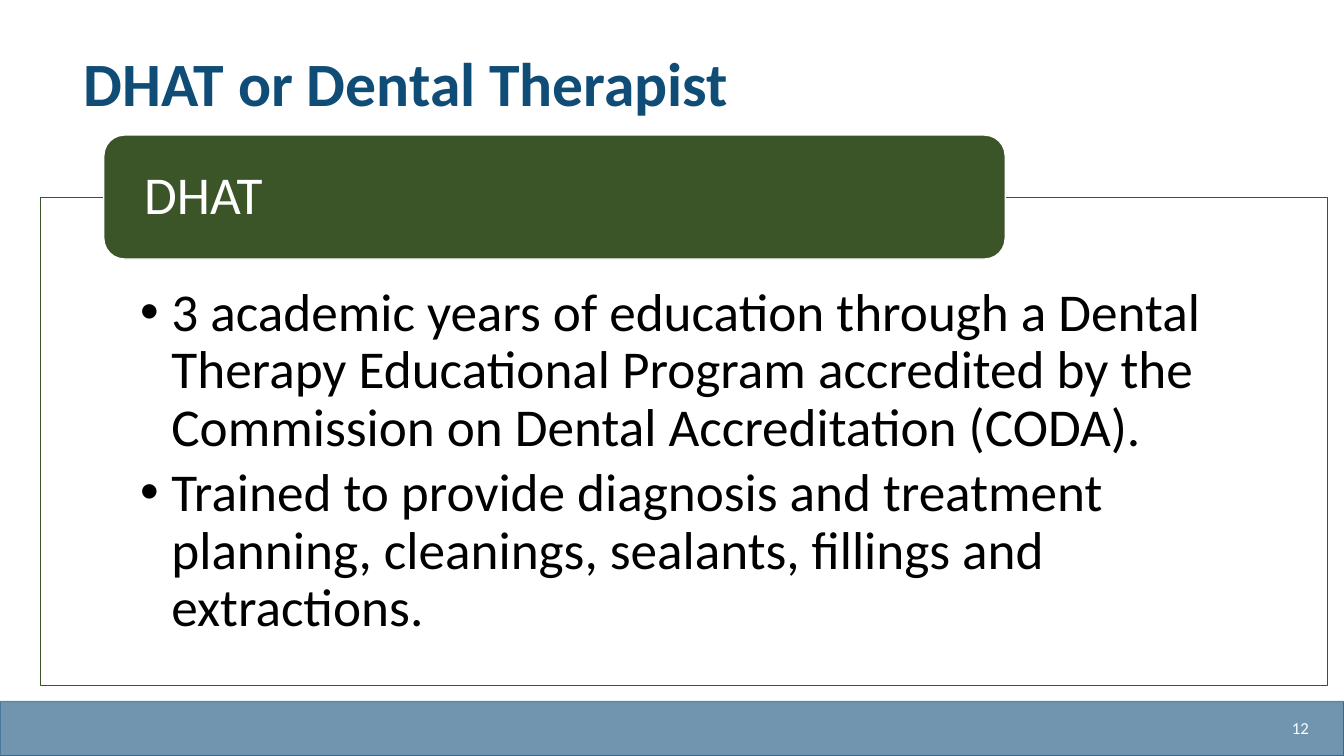
import pptx
import pptx.dml.color
import pptx.enum.shapes
import pptx.enum.text
import pptx.oxml
import pptx.oxml.ns
import pptx.util
from lxml import etree

Inches = pptx.util.Inches
Pt = pptx.util.Pt
RGBColor = pptx.dml.color.RGBColor
Shape = pptx.enum.shapes.MSO_SHAPE
Align = pptx.enum.text.PP_ALIGN
Anchor = pptx.enum.text.MSO_ANCHOR
qn = pptx.oxml.ns.qn

BLUE = RGBColor(0x0F, 0x4C, 0x76)
GREEN = RGBColor(0x3B, 0x55, 0x29)
WHITE = RGBColor(0xFF, 0xFF, 0xFF)
BLACK = RGBColor(0x00, 0x00, 0x00)


def add_panel(kind, box, fill, line, opacity):
    """Add an outlined shape; opacity gives the fill and line percentages."""
    panel = slide.shapes.add_shape(kind, *map(Inches, box))
    panel.shadow.inherit = False
    panel.fill.solid()
    panel.fill.fore_color.rgb = fill
    panel.line.color.rgb = line
    panel.line.width = Pt(1)
    colors = panel._element.spPr.iter(qn("a:srgbClr"))
    for color, percent in zip(colors, opacity):
        if percent < 100:
            etree.SubElement(color, qn("a:alpha"), val=str(percent * 1000))
    return panel


def write(holder, paragraphs, font, layout, frame_format, bullet=False):
    frame = holder.text_frame
    for name, value in {"word_wrap": True, **frame_format}.items():
        setattr(frame, name, value)
    for index, text in enumerate(paragraphs):
        paragraph = frame.add_paragraph() if index else frame.paragraphs[0]
        paragraph.text = text
        for name, value in {"alignment": Align.LEFT, **layout}.items():
            setattr(paragraph, name, value)
        if bullet:
            properties = paragraph._p.get_or_add_pPr()
            properties.set("marL", str(Inches(0.31)))
            properties.set("indent", str(-Inches(0.31)))
            etree.SubElement(properties, qn("a:buFont"), typeface="Arial")
            etree.SubElement(properties, qn("a:buChar"), char="•")
        run_font = paragraph.runs[0].font
        run_font.color.rgb = font["color"]
        run_font.name = "Calibri"
        run_font.size = Pt(font["size"])
        run_font.bold = font.get("bold", False)


deck = pptx.Presentation()
deck.slide_width = Inches(13.33)
deck.slide_height = Inches(7.5)
slide = deck.slides.add_slide(deck.slide_layouts[6])

# Footer
add_panel(Shape.RECTANGLE, (0, 6.96, 13.33, 0.54), BLUE, BLUE, (59, 59))
page_number = slide.shapes.add_textbox(*map(Inches, (11.65, 7.02, 1.43, 0.4)))
write(page_number, ["12"], {"size": 12, "color": WHITE},
      {"alignment": Align.RIGHT}, {"vertical_anchor": Anchor.MIDDLE})

# Title
title = slide.shapes.add_textbox(*map(Inches, (0.73, 0.48, 10.56, 0.78)))
write(title, ["DHAT or Dental Therapist"],
      {"size": 44, "color": BLUE, "bold": True}, {"line_spacing": 0.9}, {})

# Training details under the DHAT heading
details = add_panel(Shape.RECTANGLE, (0.4, 1.96, 12.77, 4.84),
                    WHITE, GREEN, (90, 100))
write(details,
      ["3 academic years of education through a Dental Therapy Educational "
       "Program accredited by the Commission on Dental Accreditation (CODA).",
       "Trained to provide diagnosis and treatment planning, cleanings, "
       "sealants, fillings and extractions."],
      {"size": 38, "color": BLACK},
      {"line_spacing": 0.9, "space_after": Pt(5.7)},
      {"vertical_anchor": Anchor.TOP,
       "margin_left": Inches(0.99), "margin_right": Inches(0.99),
       "margin_top": Inches(0.87), "margin_bottom": Inches(0.3)},
      bullet=True)

heading = add_panel(Shape.ROUNDED_RECTANGLE, (1.03, 1.34, 8.94, 1.23),
                    GREEN, WHITE, (100, 100))
write(heading, ["DHAT"], {"size": 38, "color": WHITE}, {"line_spacing": 0.9},
      {"vertical_anchor": Anchor.MIDDLE,
       "margin_left": Inches(0.34), "margin_right": Inches(0.34),
       "margin_top": 0, "margin_bottom": 0})

deck.save("out.pptx")
